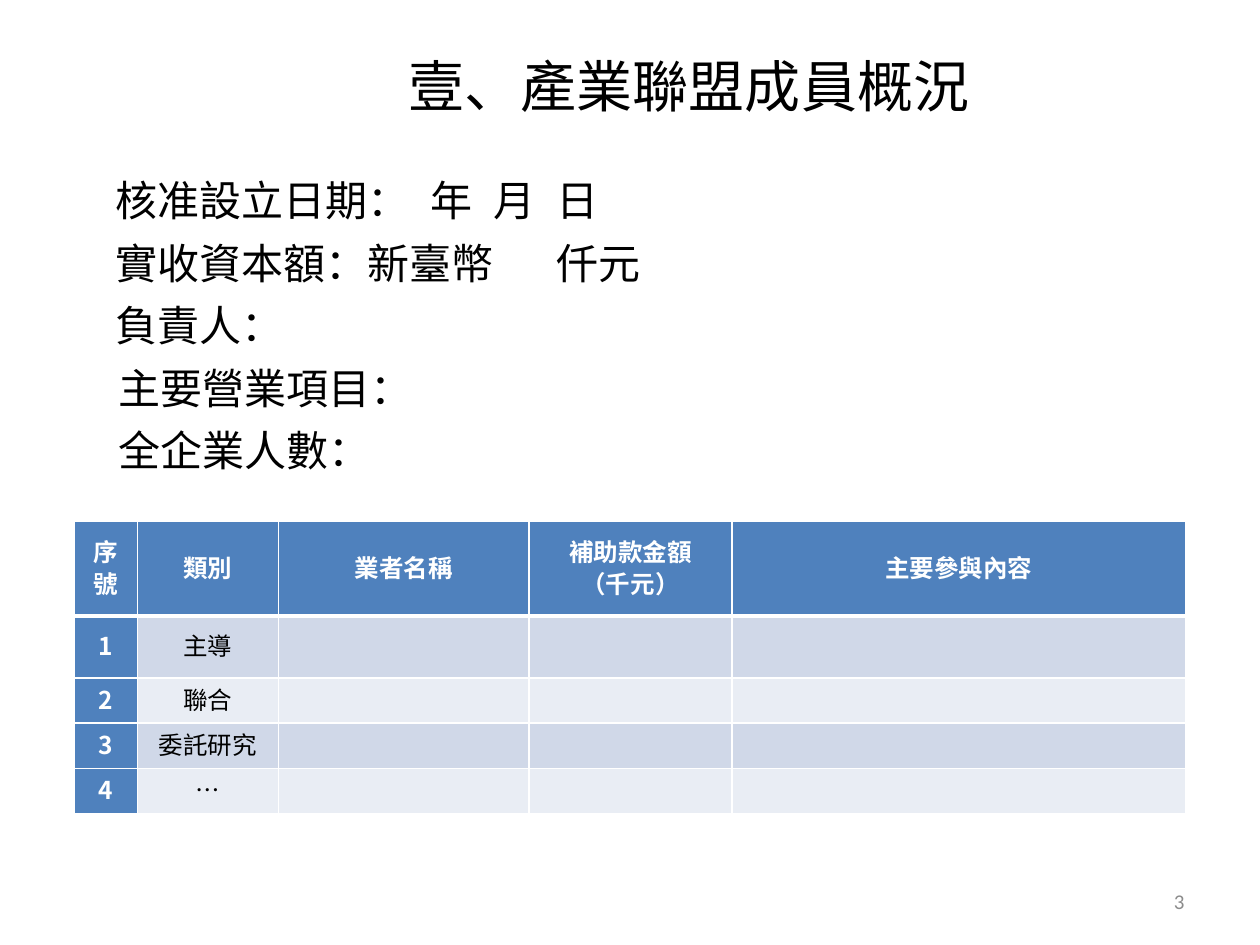
"""Builds the slide on the members of an industry alliance."""
from lxml.etree import SubElement
from pptx import Presentation
from pptx.dml.color import RGBColor
from pptx.enum.text import MSO_ANCHOR as Anchor, PP_ALIGN as Align
from pptx.oxml import parse_xml
from pptx.oxml.ns import nsdecls, qn
from pptx.util import Inches, Pt

COLORS = {"ink": "000000", "paper": "FFFFFF", "number": "8C8C8C",
          "head": "4F81BD", "odd": "D0D8E8", "even": "E9EDF4"}
CJK, LATIN = "Noto Sans CJK SC", "Calibri"

TITLE = "壹、產業聯盟成員概況"
PAGE = "3"
PROFILE = [
    ("核准設立日期：\t年\t月\t日", 0.38, (2.86, 3.34, 3.83)),
    ("實收資本額：新臺幣\t仟元", 0.38, (3.9,)),
    ("負責人：", 0.38, ()),
    ("主要營業項目：", 0.4, ()),
    ("全企業人數：", 0.4, ()),
]
MEMBERS = [
    ("序號", "類別", "業者名稱", "補助款金額\v（千元）", "主要參與內容"),
    ("1", "主導", "", "", ""),
    ("2", "聯合", "", "", ""),
    ("3", "委託研究", "", "", ""),
    ("4", "…", "", "", ""),
]
COLUMN_WIDTHS = (0.5, 1.12, 1.99, 1.61, 3.6)
ROW_HEIGHTS = (0.75, 0.49, 0.36, 0.36, 0.36)


def style_runs(paragraph, size, color, face=CJK, bold=False):
    for run in paragraph.runs:
        run.font.size = Pt(size)
        run.font.bold = bold
        run.font.name = face
        run.font.color.rgb = RGBColor.from_string(COLORS[color])
        SubElement(run.font._element, qn("a:ea"), typeface=face)


def add_text(slide, place, text, anchor=Anchor.TOP):
    frame = slide.shapes.add_textbox(*map(Inches, place)).text_frame
    frame.word_wrap = True
    frame.vertical_anchor = anchor
    frame.text = text
    return frame


def add_line(slide, place, text, align, size, color, face=CJK):
    line = add_text(slide, place, text, Anchor.MIDDLE).paragraphs[0]
    line.alignment = align
    style_runs(line, size, color, face)


def add_profile(slide):
    frame = add_text(slide, (0.5, 1.3, 8.35, 2.76),
                     "\n".join(text for text, _, _ in PROFILE))
    frame.margin_left = frame.margin_right = Inches(0.04)
    for index, (line, (_, indent, stops)) in enumerate(zip(frame.paragraphs, PROFILE)):
        line.line_spacing = 1.1
        line.space_before = Pt(4 if index else 0)
        properties = line._p.get_or_add_pPr()
        properties.set("marL", str(Inches(indent)))
        properties.set("indent", "0")
        if stops:
            tabs = SubElement(properties, qn("a:tabLst"))
            for stop in stops:
                SubElement(tabs, qn("a:tab"), pos=str(Inches(stop)), algn="l")
        style_runs(line, 24, "ink")


def set_borders(cell, widths):
    for index, (side, width) in enumerate(widths.items()):
        border = parse_xml(
            f'<a:ln{side} {nsdecls("a")} w="{Pt(width)}"><a:solidFill>'
            f'<a:srgbClr val="{COLORS["paper"]}"/></a:solidFill></a:ln{side}>')
        cell._tc.get_or_add_tcPr().insert(index, border)


def style_cell(cell, text, row, column):
    heading = row == 0 or column == 0
    cell.text_frame.text = text
    cell.vertical_anchor = Anchor.MIDDLE
    cell.margin_left = cell.margin_right = Inches(0.07)
    cell.margin_top = cell.margin_bottom = 0
    cell.fill.solid()
    fill = "head" if heading else "odd" if row % 2 else "even"
    cell.fill.fore_color.rgb = RGBColor.from_string(COLORS[fill])
    set_borders(cell, {"L": 1, "R": 1, "T": 3 if row == 1 else 1,
                       "B": 3 if row == 0 else 1})
    line = cell.text_frame.paragraphs[0]
    line.alignment = Align.CENTER
    line.line_spacing = Pt(18)
    style_runs(line, 14, "paper" if heading else "ink", bold=heading)


def add_members(slide):
    size = (sum(COLUMN_WIDTHS), sum(ROW_HEIGHTS))
    members = slide.shapes.add_table(len(MEMBERS), len(COLUMN_WIDTHS),
                                     *map(Inches, (0.59, 4.14, *size))).table
    for column, width in zip(members.columns, COLUMN_WIDTHS):
        column.width = Inches(width)
    for row, height in zip(members.rows, ROW_HEIGHTS):
        row.height = Inches(height)
    for r, member in enumerate(MEMBERS):
        for c, text in enumerate(member):
            style_cell(members.cell(r, c), text, r, c)


def main():
    deck = Presentation()
    deck.slide_width, deck.slide_height = Inches(10), Inches(7.5)
    slide = deck.slides.add_slide(deck.slide_layouts[6])
    add_profile(slide)
    add_line(slide, (7.17, 6.95, 2.33, 0.4), PAGE, Align.RIGHT, 12, "number", LATIN)
    add_line(slide, (2.32, 0.17, 6.3, 1.01), TITLE, Align.CENTER, 32, "ink")
    add_members(slide)
    deck.save("out.pptx")


if __name__ == "__main__":
    main()
